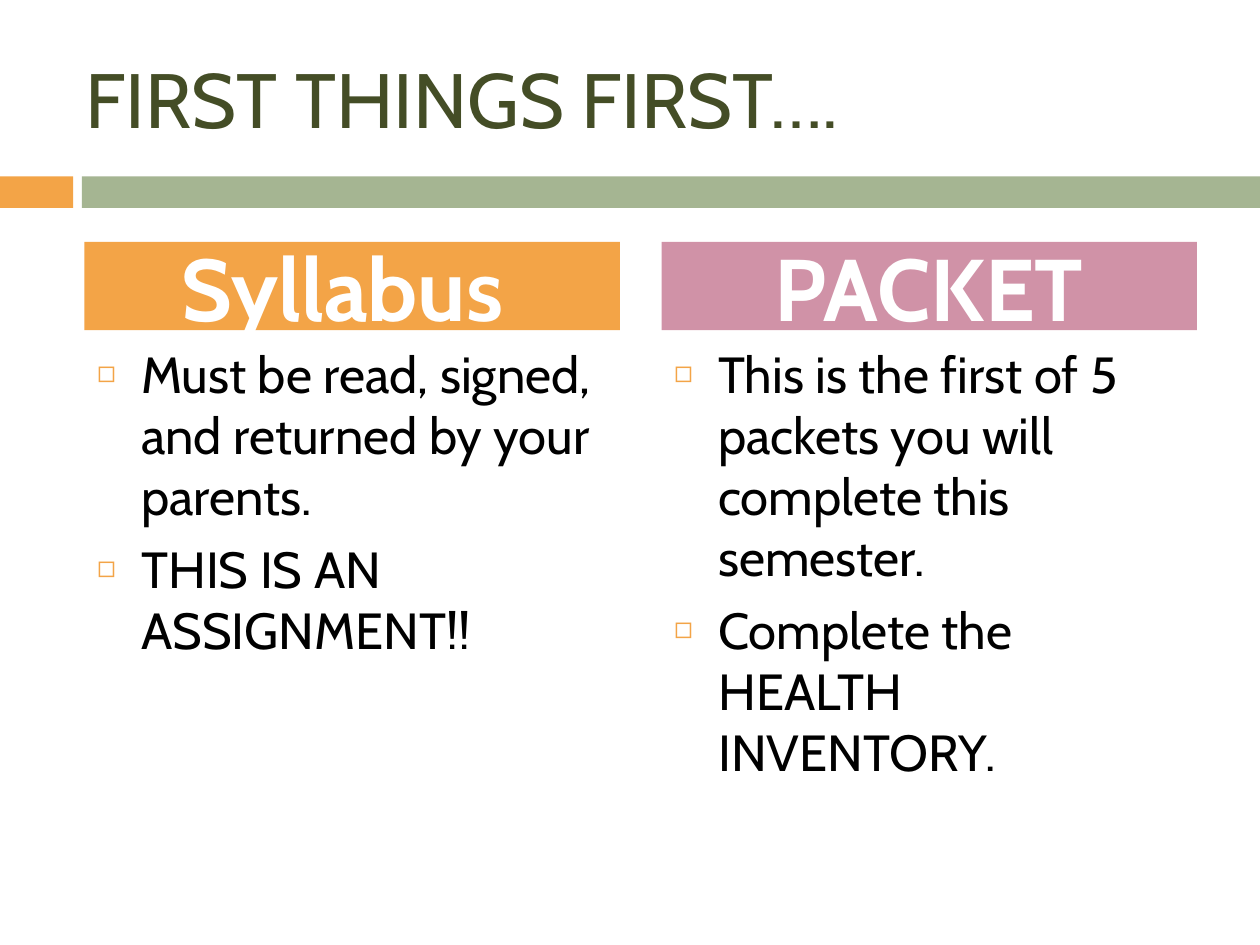
"""Build the slide that introduces the syllabus and the first packet."""
from lxml.etree import SubElement
from pptx import Presentation
from pptx.dml.color import RGBColor
from pptx.enum.shapes import MSO_SHAPE
from pptx.enum.text import MSO_ANCHOR, MSO_AUTO_SIZE, PP_ALIGN
from pptx.oxml.ns import qn
from pptx.util import Inches, Pt

ORANGE = RGBColor(0xF3, 0xA4, 0x47)
GREEN = RGBColor(0xA5, 0xB5, 0x92)
PINK = RGBColor(0xD0, 0x92, 0xA7)
OLIVE = RGBColor(0x44, 0x4D, 0x26)
BLACK = RGBColor(0, 0, 0)
WHITE = RGBColor(0xFF, 0xFF, 0xFF)

COLUMNS = [
    (0.67, 1, ORANGE, "Syllabus ", [
        "Must be read, signed, and returned by your parents.",
        "THIS IS AN ASSIGNMENT!!",
    ]),
    (5.25, 3, PINK, "PACKET", [
        "This is the first of 5 packets you will complete this semester.",
        "Complete the HEALTH INVENTORY.",
    ]),
]


def place(box, left, top, width, height, anchor):
    box.left, box.top = Inches(left), Inches(top)
    box.width, box.height = Inches(width), Inches(height)
    frame = box.text_frame
    frame.auto_size = MSO_AUTO_SIZE.NONE
    frame.word_wrap = True
    frame.vertical_anchor = anchor
    return frame


def write(paragraph, text, size, color, align, before, bold=False):
    paragraph.alignment = align
    paragraph.space_before = Pt(before)
    span = paragraph.add_run()
    span.text = text
    span.font.name = "Cabin"
    span.font.size = Pt(size)
    span.font.bold = bold
    span.font.color.rgb = color


deck = Presentation()
deck.slide_width, deck.slide_height = Inches(10), Inches(7.5)
page = deck.slides.add_slide(deck.slide_layouts.get_by_name("Comparison"))

for left, width, color in [(0, 0.58, ORANGE), (0.65, 9.35, GREEN)]:
    band = page.shapes.add_shape(
        MSO_SHAPE.RECTANGLE, Inches(left), Inches(1.4), Inches(width), Inches(0.25))
    band.shadow.inherit = False
    band.fill.solid()
    band.fill.fore_color.rgb = color
    band.line.fill.background()

title = place(page.shapes.title, 0.58, 0.3, 8.92, 0.95, MSO_ANCHOR.MIDDLE)
write(title.paragraphs[0], "FIRST THINGS FIRST….", 44, OLIVE, PP_ALIGN.LEFT, 0)

for left, index, color, heading, items in COLUMNS:
    header = page.placeholders[index]
    header.fill.solid()
    header.fill.fore_color.rgb = color
    frame = place(header, left, 1.92, 4.25, 0.7, MSO_ANCHOR.MIDDLE)
    write(frame.paragraphs[0], heading, 50, WHITE, PP_ALIGN.CENTER, 7, True)

    frame = place(page.placeholders[index + 1], left, 2.67, 4.25, 3.92, MSO_ANCHOR.TOP)
    for number, item in enumerate(items):
        paragraph = frame.add_paragraph() if number else frame.paragraphs[0]
        write(paragraph, item, 29, BLACK, PP_ALIGN.LEFT, 7)
        properties = paragraph._p.get_or_add_pPr()
        properties.set("marL", str(Inches(0.35)))
        properties.set("indent", str(Inches(-0.35)))
        bullet_color = SubElement(properties, qn("a:buClr"))
        SubElement(bullet_color, qn("a:srgbClr"), val=str(ORANGE))
        SubElement(properties, qn("a:buSzPct"), val="60000")
        SubElement(properties, qn("a:buChar"), char="◻")

deck.save("out.pptx")
